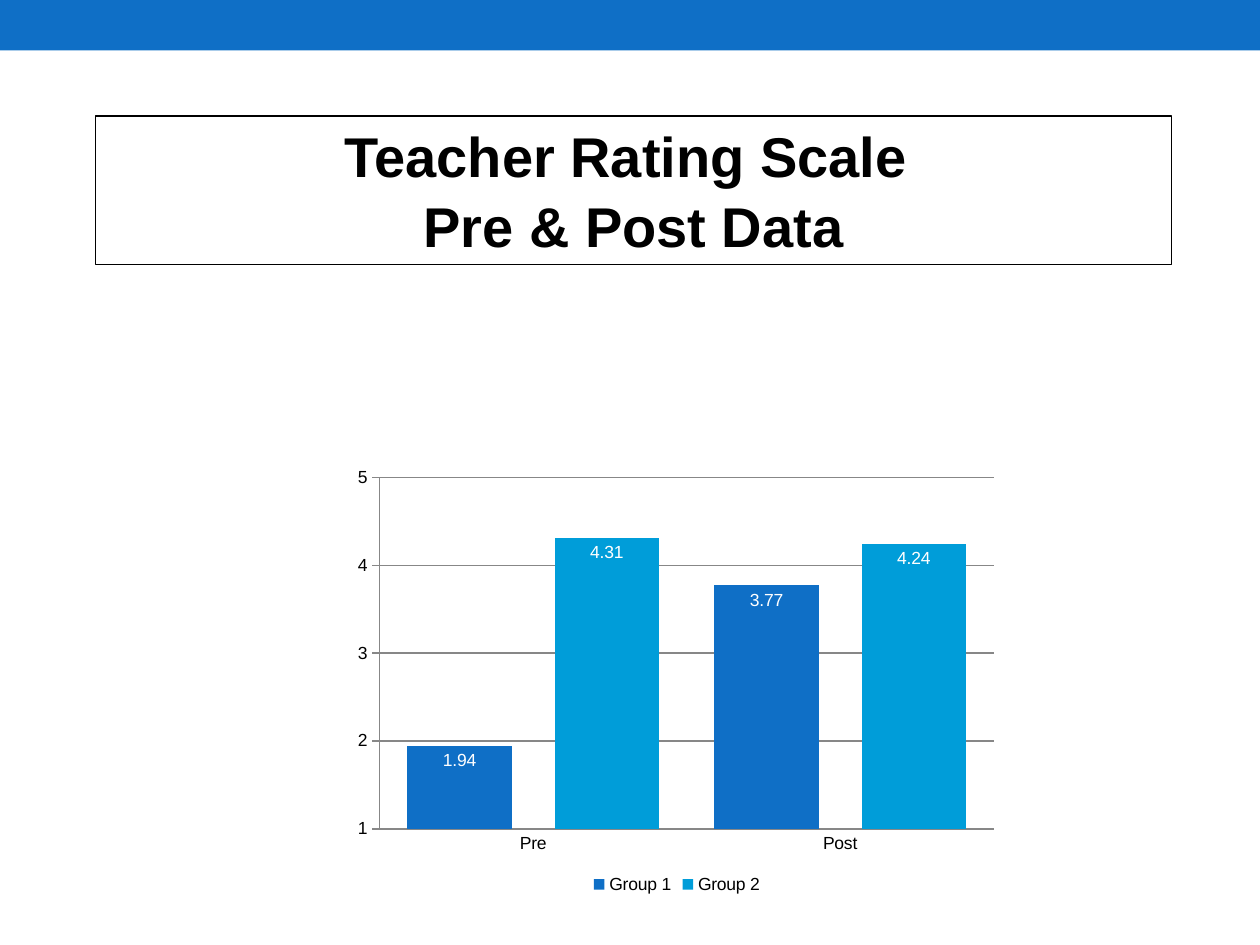
from lxml import etree
from pptx import Presentation
from pptx.chart.data import CategoryChartData
from pptx.dml.color import RGBColor
from pptx.enum.chart import XL_CHART_TYPE, XL_LABEL_POSITION, XL_LEGEND_POSITION, XL_TICK_MARK
from pptx.enum.shapes import MSO_SHAPE
from pptx.enum.text import MSO_ANCHOR, PP_ALIGN
from pptx.util import Cm, Pt

BLUE = RGBColor(0x0F, 0x6F, 0xC6)
CYAN = RGBColor(0x00, 0x9D, 0xD9)
GRAY = RGBColor(0x87, 0x87, 0x87)
BLACK = RGBColor(0, 0, 0)
WHITE = RGBColor(255, 255, 255)


def style(font, size, color, bold=False):
    values = {"name": "Arial", "size": Pt(size), "bold": bold}
    for key, value in values.items():
        setattr(font, key, value)
    font.color.rgb = color


deck = Presentation()
deck.slide_width, deck.slide_height = Cm(25.4), Cm(19.05)
slide = deck.slides.add_slide(deck.slide_layouts[6])

# Top band
band = slide.shapes.add_shape(MSO_SHAPE.RECTANGLE, 0, 0, Cm(25.4), Cm(1.02))
band.shadow.inherit = False
band.fill.solid()
band.fill.fore_color.rgb = BLUE
band.line.fill.background()

# Chart
data = CategoryChartData()
data.categories = ["Pre", "Post"]
data.add_series("Group 1", (1.94, 3.77))
data.add_series("Group 2", (4.31, 4.24))
chart = slide.shapes.add_chart(
    XL_CHART_TYPE.COLUMN_CLUSTERED, Cm(6.99), Cm(9.27), Cm(13.31), Cm(8.86), data
).chart
style(chart.font, 10, BLACK)
chart.has_title = False
chart.has_legend = True
chart.legend.position = XL_LEGEND_POSITION.BOTTOM
chart.legend.include_in_layout = False

plot = chart.plots[0]
for key, value in {"gap_width": 53, "overlap": -41, "vary_by_categories": False}.items():
    setattr(plot, key, value)
for series, color in zip(plot.series, (BLUE, CYAN)):
    series.format.fill.solid()
    series.format.fill.fore_color.rgb = color
    labels = series.data_labels
    labels.show_value = True
    labels.position = XL_LABEL_POSITION.INSIDE_END
    style(labels.font, 10, WHITE)

scale = chart.value_axis
limits = {"minimum_scale": 1, "maximum_scale": 5, "major_unit": 1, "has_major_gridlines": True}
for key, value in limits.items():
    setattr(scale, key, value)
scale.major_tick_mark = XL_TICK_MARK.OUTSIDE
chart.category_axis.major_tick_mark = XL_TICK_MARK.NONE
for part in (scale, chart.category_axis, scale.major_gridlines):
    part.format.line.color.rgb = GRAY
    part.format.line.width = Pt(0.75)

# Fixed place of the plot area inside the chart
area = chart.element.chart.plotArea
ns = area.nsmap["c"]
for old in area.findall(f"{{{ns}}}layout"):
    area.remove(old)
layout = etree.Element(f"{{{ns}}}layout")
manual = etree.SubElement(layout, f"{{{ns}}}manualLayout")
frame = {"layoutTarget": "inner", "xMode": "edge", "yMode": "edge",
         "x": 0.05, "y": 0.04, "w": 0.93, "h": 0.8}
for tag, value in frame.items():
    etree.SubElement(manual, f"{{{ns}}}{tag}", val=str(value))
area.insert(0, layout)

# Title
title = slide.shapes.add_textbox(Cm(1.93), Cm(2.34), Cm(21.69), Cm(3))
title.line.color.rgb = BLACK
title.line.width = Pt(0.75)
text = title.text_frame
text.word_wrap = True
text.vertical_anchor = MSO_ANCHOR.MIDDLE
text.text = "Teacher Rating Scale \nPre & Post Data"
for para in text.paragraphs:
    para.alignment = PP_ALIGN.CENTER
    para.space_before = Pt(1.5)
    style(para.runs[0].font, 32, BLACK, True)

deck.save("out.pptx")
